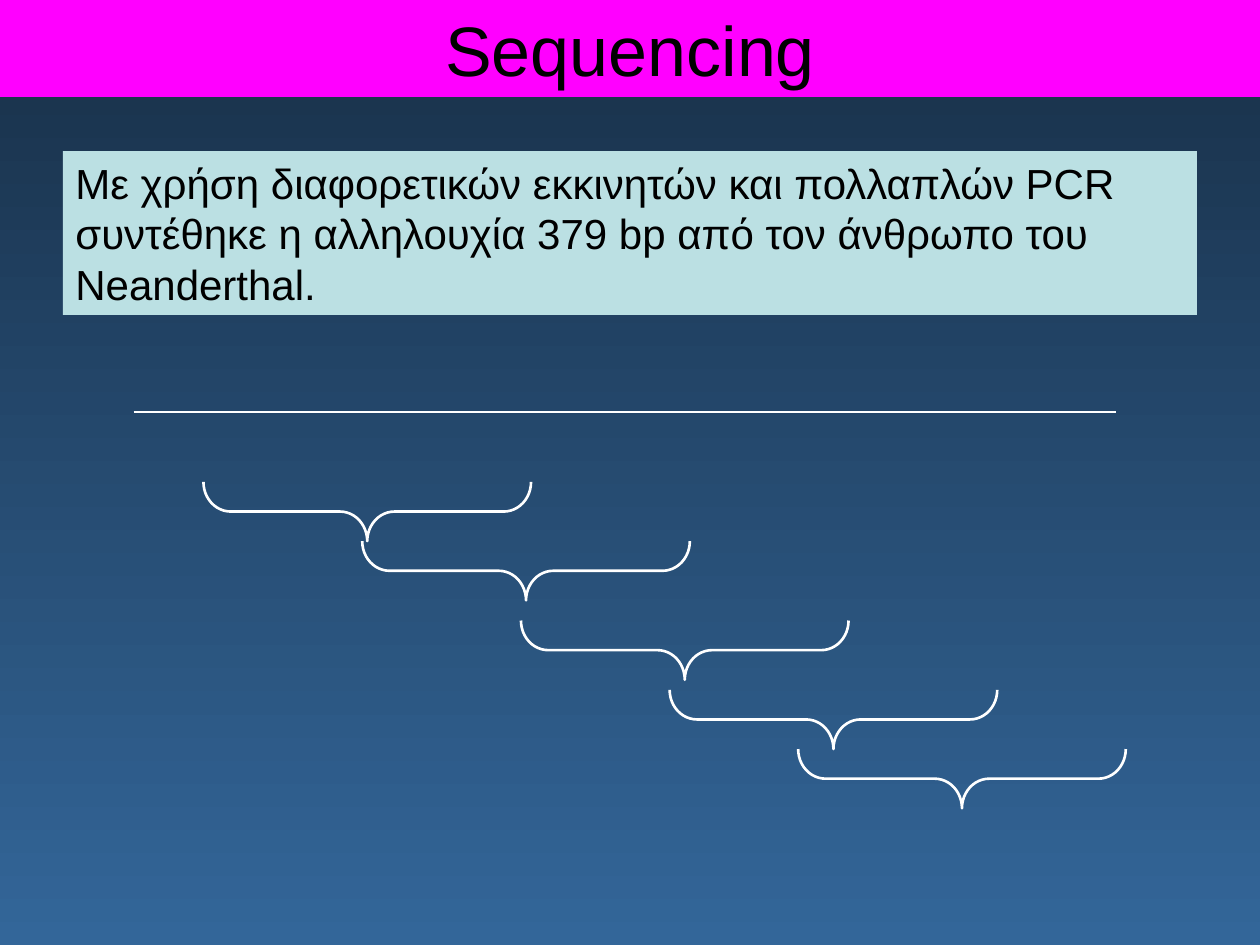
"""Build the Sequencing slide with overlapping PCR fragments."""
from pptx import Presentation
from pptx.dml.color import RGBColor as Rgb
from pptx.enum.shapes import MSO_CONNECTOR as Conn, MSO_SHAPE as Kind
from pptx.enum.text import MSO_ANCHOR as Anchor, PP_ALIGN as Align
from pptx.oxml.ns import qn
from pptx.util import Inches, Pt

HUES = {"top": "182F47", "base": "336699", "title": "FF00FF",
        "note": "BBE0E3", "text": "000000", "line": "FFFFFF"}


def hue(name):
    return Rgb.from_string(HUES[name])


def add_box(slide, spot, name, text, size, align):
    box = slide.shapes.add_textbox(*map(Inches, spot))
    box.fill.solid()
    box.fill.fore_color.rgb = hue(name)
    frame = box.text_frame
    frame.word_wrap = True
    frame.vertical_anchor = Anchor.TOP
    para = frame.paragraphs[0]
    para.alignment = align
    run = para.add_run()
    run.text = text
    run.font.name = "Arial"
    run.font.size = Pt(size)
    run.font.color.rgb = hue("text")


deck = Presentation()
deck.slide_width, deck.slide_height = Inches(10), Inches(7.5)
slide = deck.slides.add_slide(deck.slide_layouts[6])

back = slide.background.fill
back.gradient()
back.gradient_angle = 270
for stop, name in zip(back.gradient_stops, ("top", "base")):
    stop.color.rgb = hue(name)

add_box(slide, (0, 0, 10, 0.77), "title", "Sequencing", 40, Align.CENTER)
add_box(slide, (0.5, 1.2, 9, 1.3), "note",
        "Με χρήση διαφορετικών εκκινητών και πολλαπλών PCR συντέθηκε "
        "η αλληλουχία 379 bp από τον άνθρωπο του Neanderthal.",
        24, Align.LEFT)

strand = slide.shapes.add_connector(
    Conn.STRAIGHT, Inches(1.06), Inches(3.27), Inches(8.86), Inches(3.27))
strand.line.color.rgb = hue("line")
strand.line.width = Pt(1.5)
props = strand._element.spPr
props.append(props.makeelement(qn("a:effectLst"), {}))

for left, top in ((2.68, 2.76), (3.94, 3.23), (5.2, 3.86), (6.38, 4.41), (7.4, 4.88)):
    brace = slide.shapes.add_shape(
        Kind.LEFT_BRACE, Inches(left), Inches(top), Inches(0.47), Inches(2.6))
    brace.rotation = 270
    brace.adjustments[0] = 0.46
    brace.adjustments[1] = 0.5
    brace.shadow.inherit = False
    brace.fill.background()
    brace.line.color.rgb = hue("line")
    brace.line.width = Pt(1.5)

deck.save("out.pptx")
